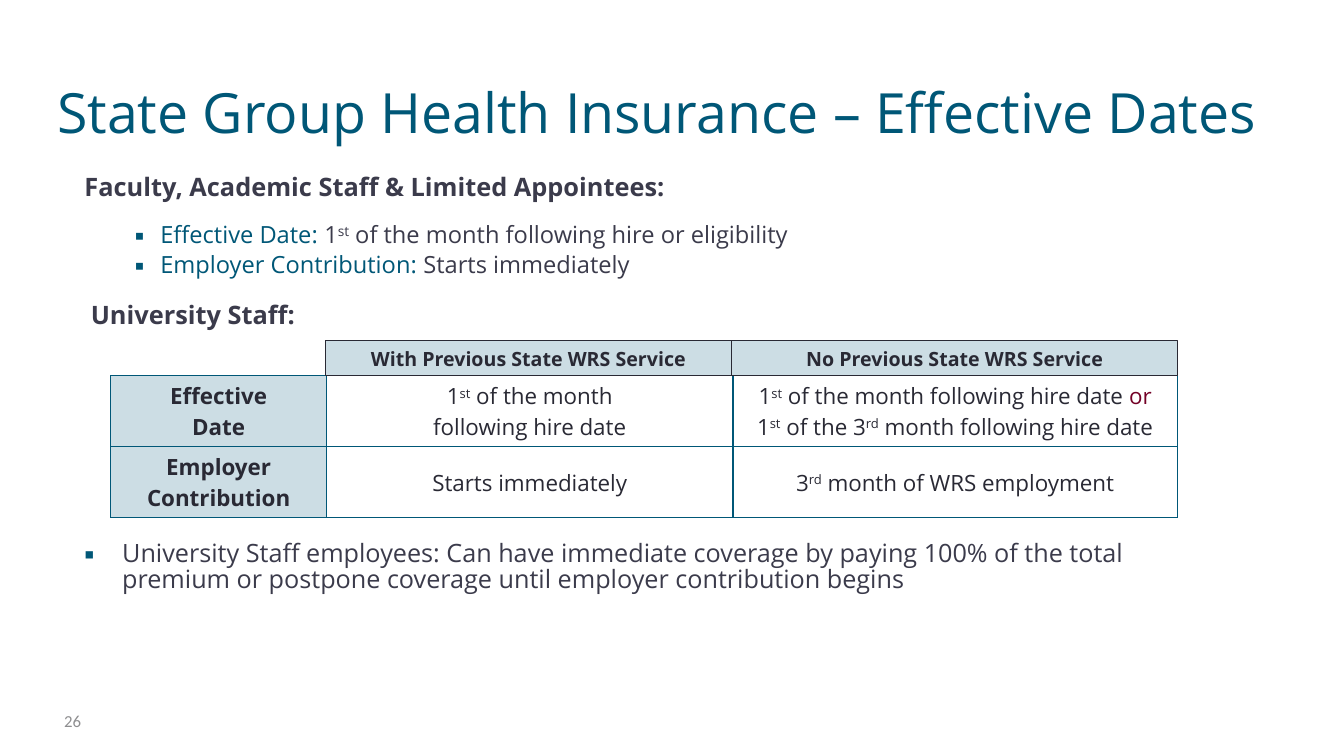
import dataclasses
import typing

import lxml.etree
import pptx
import pptx.dml.color
import pptx.enum.shapes
import pptx.enum.text
import pptx.oxml.ns
import pptx.util

Cm = pptx.util.Cm
Pt = pptx.util.Pt
ALIGN = pptx.enum.text.PP_ALIGN
ANCHOR = pptx.enum.text.MSO_ANCHOR

COLORS = {
    "teal": "005777",
    "slate": "3B3B4B",
    "ink": "292934",
    "gray": "8E8E90",
    "maroon": "730026",
    "pale": "CCDDE4",
}


@dataclasses.dataclass
class Run:
    text: str
    color: typing.Optional[str] = None
    raised: bool = False


@dataclasses.dataclass
class Line:
    runs: list[Run]
    size: float
    color: str = "slate"
    bold: bool = False
    font: str = "Open Sans"
    align: ALIGN = ALIGN.LEFT
    spacing: float = 1.0
    before: float = 0
    after: float = 0
    margin: float = 0
    hanging: float = 0


@dataclasses.dataclass
class TextBox:
    left: float
    top: float
    width: float
    height: float
    lines: list[Line]
    anchor: ANCHOR = ANCHOR.TOP
    bottom_inset: float = 0.13


@dataclasses.dataclass
class Header:
    text: str
    left: float
    width: float


def rgb(name: str) -> pptx.dml.color.RGBColor:
    return pptx.dml.color.RGBColor.from_string(COLORS[name])


def add_child(parent: typing.Any, tag: str, **attributes: str) -> typing.Any:
    return lxml.etree.SubElement(parent, pptx.oxml.ns.qn(tag), attributes)


def write_lines(frame: typing.Any, lines: list[Line]) -> None:
    for index, line in enumerate(lines):
        paragraph = frame.add_paragraph() if index else frame.paragraphs[0]
        paragraph.alignment = line.align
        paragraph.line_spacing = line.spacing
        paragraph.space_before = Pt(line.before)
        paragraph.space_after = Pt(line.after)
        properties = paragraph._p.get_or_add_pPr()
        properties.set("marL", str(Cm(line.margin)))
        properties.set("indent", str(-Cm(line.hanging)))
        if line.hanging:
            bullet_color = add_child(properties, "a:buClr")
            add_child(bullet_color, "a:srgbClr", val=COLORS["teal"])
            add_child(properties, "a:buFont", typeface="Open Sans")
            add_child(properties, "a:buChar", char="▪")
        paragraph.font.name = line.font
        paragraph.font.size = Pt(line.size)
        paragraph.font.bold = line.bold
        paragraph.font.color.rgb = rgb(line.color)
        for part in line.runs:
            run = paragraph.add_run()
            run.text = part.text
            if part.color:
                run.font.color.rgb = rgb(part.color)
            if part.raised:
                run._r.get_or_add_rPr().set("baseline", "30000")


def add_text_box(slide: typing.Any, box: TextBox) -> None:
    shape = slide.shapes.add_textbox(Cm(box.left), Cm(box.top), Cm(box.width), Cm(box.height))
    frame = shape.text_frame
    frame.word_wrap = True
    frame.vertical_anchor = box.anchor
    frame.margin_bottom = Cm(box.bottom_inset)
    write_lines(frame, box.lines)


def add_header(slide: typing.Any, header: Header) -> None:
    shape = slide.shapes.add_shape(
        pptx.enum.shapes.MSO_SHAPE.RECTANGLE, Cm(header.left), Cm(8.59), Cm(header.width), Cm(0.88)
    )
    shape.shadow.inherit = False
    shape.fill.solid()
    shape.fill.fore_color.rgb = rgb("pale")
    shape.line.color.rgb = rgb("ink")
    shape.line.width = Pt(0.75)
    frame = shape.text_frame
    frame.margin_top = frame.margin_bottom = 0
    frame.vertical_anchor = ANCHOR.MIDDLE
    write_lines(frame, [Line([Run(header.text)], 14, "ink", True, align=ALIGN.CENTER)])


def add_borders(cell: typing.Any) -> None:
    properties = cell._tc.get_or_add_tcPr()
    for index, side in enumerate(("a:lnL", "a:lnR", "a:lnT", "a:lnB")):
        border = add_child(properties, side, w=str(Pt(1)))
        fill = add_child(border, "a:solidFill")
        add_child(fill, "a:srgbClr", val=COLORS["teal"])
        properties.remove(border)
        properties.insert(index, border)


def add_dates_table(slide: typing.Any, rows: list[list[list[list[Run]]]], widths: list[float]) -> None:
    row_height = 1.79
    table = slide.shapes.add_table(
        len(rows), len(widths), Cm(2.79), Cm(9.47), Cm(sum(widths)), Cm(row_height * len(rows))
    ).table
    table.first_row = False
    table.horz_banding = False
    for column, width in zip(table.columns, widths):
        column.width = Cm(width)
    for row_index, row in enumerate(rows):
        table.rows[row_index].height = Cm(row_height)
        for column_index, content in enumerate(row):
            cell = table.cell(row_index, column_index)
            is_label = column_index == 0
            cell.vertical_anchor = ANCHOR.MIDDLE
            if is_label:
                cell.fill.solid()
                cell.fill.fore_color.rgb = rgb("pale")
            else:
                cell.fill.background()
            add_borders(cell)
            lines = [Line(runs, 16, "ink", is_label, align=ALIGN.CENTER) for runs in content]
            write_lines(cell.text_frame, lines)


ST = Run("st", raised=True)
RD = Run("rd", raised=True)

BULLET = {"size": 16.9, "spacing": 0.88, "before": 3.4, "margin": 1.91, "hanging": 0.64}

TEXT_BOXES = [
    TextBox(1.19, 0.46, 32.49, 3.18,
            [Line([Run("State Group Health Insurance – Effective Dates")], 39.6, "teal")],
            ANCHOR.BOTTOM, 0),
    TextBox(1.88, 13.51, 27.51, 2.74,
            [Line([Run("University Staff employees: Can have immediate coverage by paying 100% of the "
                       "total premium or postpone coverage until employer contribution begins")],
                  18, spacing=0.88, margin=0.95, hanging=0.95)]),
    TextBox(1.37, 17.65, 1.42, 1.02,
            [Line([Run("26")], 12, "gray", font="Calibri")], ANCHOR.MIDDLE),
    TextBox(1.88, 4.29, 31.14, 4.57, [
        Line([Run("Faculty, Academic Staff & Limited Appointees:")], 18.1, bold=True, spacing=0.88, after=12),
        Line([Run("Effective Date: ", "teal"), Run("1"), ST,
              Run(" of the month following hire or eligibility")], **BULLET),
        Line([Run("Employer Contribution: ", "teal"), Run("Starts immediately")], **BULLET),
        Line([Run("University Staff:")], 18.1, bold=True, spacing=0.88, before=18, margin=0.16),
    ]),
]

COLUMN_WIDTHS = [5.44, 10.24, 11.2]
TABLE_ROWS = [
    [
        [[Run("Effective")], [Run("Date")]],
        [[Run("1"), ST, Run(" of the month")], [Run("following hire date")]],
        [[Run("1"), ST, Run(" of the month following hire date "), Run("or", "maroon")],
         [Run("1"), ST, Run(" of the 3"), RD, Run(" month following hire date")]],
    ],
    [
        [[Run("Employer Contribution")]],
        [[Run("Starts immediately")]],
        [[Run("3"), RD, Run(" month of WRS employment")]],
    ],
]

HEADERS = [
    Header("With Previous State WRS Service", 8.2, 10.24),
    Header("No Previous State WRS Service", 18.44, 11.24),
]


def main() -> None:
    presentation = pptx.Presentation()
    presentation.slide_width = Cm(33.87)
    presentation.slide_height = Cm(19.05)
    slide = presentation.slides.add_slide(presentation.slide_layouts[6])
    for box in TEXT_BOXES:
        add_text_box(slide, box)
    add_dates_table(slide, TABLE_ROWS, COLUMN_WIDTHS)
    for header in HEADERS:
        add_header(slide, header)
    presentation.save("out.pptx")


if __name__ == "__main__":
    main()
